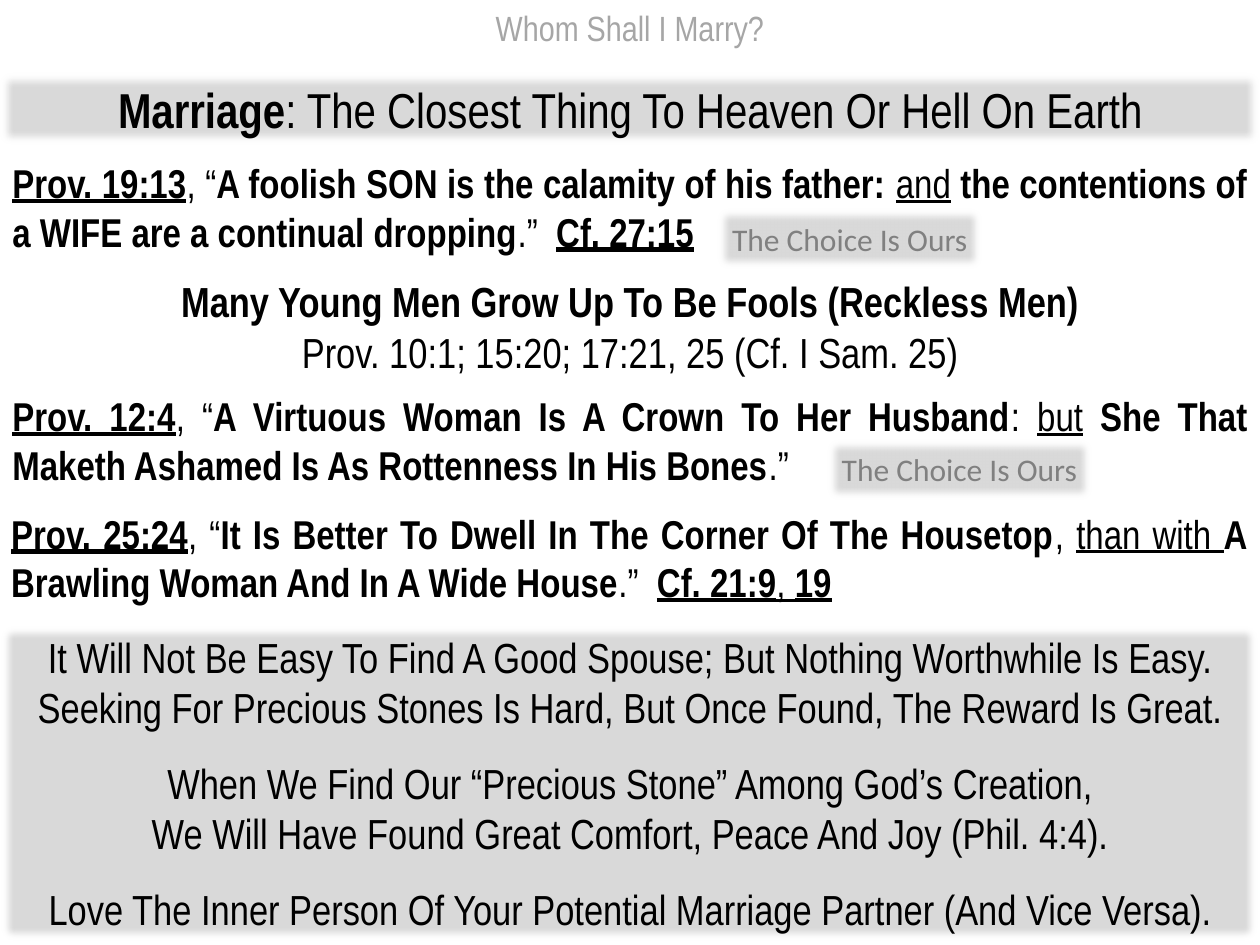
from lxml import etree
from pptx import Presentation
from pptx.dml.color import RGBColor
from pptx.enum.shapes import MSO_SHAPE
from pptx.enum.text import MSO_ANCHOR, MSO_AUTO_SIZE, PP_ALIGN
from pptx.oxml.ns import qn
from pptx.util import Inches, Pt

RECTANGLE = MSO_SHAPE.RECTANGLE
CENTER, JUSTIFY = PP_ALIGN.CENTER, PP_ALIGN.JUSTIFY
TOP, MIDDLE = MSO_ANCHOR.TOP, MSO_ANCHOR.MIDDLE
GROW, FIXED = MSO_AUTO_SIZE.SHAPE_TO_FIT_TEXT, MSO_AUTO_SIZE.NONE

COLORS = {"black": "000000", "title": "A6A6A6", "choice": "808080",
          "panel": "D9D9D9", "outline": "1E3256"}
SOFT_EDGE = Pt(5)


def add_text(paragraph, text, *, style="", size=24, font="Arial Narrow", color="black"):
    """Add text; style may hold b (bold) and u (underline), \n breaks the line."""
    for index, line in enumerate(text.split("\n")):
        if index:
            paragraph.add_line_break()
        if not line:
            continue
        run = paragraph.add_run()
        run.text = line
        run.font.name = font
        run.font.size = Pt(size)
        run.font.bold = "b" in style
        run.font.underline = "u" in style
        run.font.color.rgb = RGBColor.from_string(COLORS[color])


class SlideBuilder:
    def __init__(self, slide):
        self.slide = slide

    def fill_frame(self, shape, paragraphs, align=CENTER, anchor=TOP, fit=GROW,
                   gaps=(), **text_format):
        """Each paragraph is a list of (text, style); gaps maps index to space before."""
        frame = shape.text_frame
        frame.word_wrap = True
        frame.auto_size = fit
        frame.vertical_anchor = anchor
        for index, pieces in enumerate(paragraphs):
            paragraph = frame.add_paragraph() if index else frame.paragraphs[0]
            paragraph.alignment = align
            if index in gaps:
                paragraph.space_before = Pt(gaps[index])
            for text, style in pieces:
                add_text(paragraph, text, style=style, **text_format)

    def text_box(self, left, top, height, pieces, **options):
        box = self.slide.shapes.add_textbox(
            Inches(left), Inches(top), Inches(10), Inches(height))
        self.fill_frame(box, [pieces], **options)

    def verse(self, top, pieces, left=0):
        self.text_box(left, top, 0.88, pieces, align=JUSTIFY, size=23)

    def soft_panel(self, left, top, width, height, paragraphs, outline=False, **options):
        shape = self.slide.shapes.add_shape(
            RECTANGLE, Inches(left), Inches(top), Inches(width), Inches(height))
        shape.fill.solid()
        shape.fill.fore_color.rgb = RGBColor.from_string(COLORS["panel"])
        if outline:
            shape.line.color.rgb = RGBColor.from_string(COLORS["outline"])
            shape.line.width = Pt(1)
        else:
            shape.line.fill.background()
        # Soft edges take the place of the theme shadow
        shape.shadow.inherit = False
        effects = shape._element.spPr.find(qn("a:effectLst"))
        etree.SubElement(effects, qn("a:softEdge"), rad=str(int(SOFT_EDGE)))
        self.fill_frame(shape, paragraphs, **options)

    def choice_label(self, left, top):
        self.soft_panel(left, top, 2.13, 0.51, [[("The Choice Is Ours", "")]],
                        outline=True, anchor=MIDDLE, fit=FIXED,
                        size=18, font="Calibri", color="choice")


def main():
    presentation = Presentation()
    presentation.slide_width = Inches(10)
    presentation.slide_height = Inches(7.5)
    builder = SlideBuilder(presentation.slides.add_slide(presentation.slide_layouts[6]))

    # Heading banner and title
    builder.soft_panel(0, 0.58, 10, 0.57, [[
        ("Marriage", "b"),
        (": The Closest Thing To Heaven Or Hell On Earth", "")]], size=28)
    builder.text_box(0, 0, 0.44, [("Whom Shall I Marry?", "")], size=20, color="title")

    # Closing panel
    closing = [
        "It Will Not Be Easy To Find A Good Spouse; But Nothing Worthwhile Is Easy.",
        "Seeking For Precious Stones Is Hard, But Once Found, The Reward Is Great.",
        "When We Find Our “Precious Stone” Among God’s Creation,\n"
        "We Will Have Found Great Comfort, Peace And Joy (Phil. 4:4).",
        "Love The Inner Person Of Your Potential Marriage Partner (And Vice Versa).",
    ]
    builder.soft_panel(0, 4.96, 10, 2.52, [[(text, "")] for text in closing],
                       gaps={2: 14.5, 3: 14.5})

    # Verses, with the labels beside them
    builder.verse(1.21, [
        ("Prov. 19:13", "bu"), (", “", ""),
        ("A foolish SON is the calamity of his father: ", "b"), ("and", "u"),
        (" the contentions of a WIFE are a continual dropping", "b"),
        (".”  ", ""), ("Cf. 27:15", "bu")])
    builder.choice_label(5.68, 1.64)
    builder.verse(3.06, [
        ("Prov. 12:4", "bu"), (", “", ""),
        ("A Virtuous Woman Is A Crown To Her Husband", "b"), (": ", ""),
        ("but", "u"), (" ", ""),
        ("She That Maketh Ashamed Is As Rottenness In His Bones", "b"), (".”", "")])
    builder.text_box(0, 2.14, 0.91, [
        ("Many Young Men Grow Up To Be Fools (Reckless Men)\n", "b"),
        ("Prov. 10:1; 15:20; 17:21, 25 (Cf. I Sam. 25)", "")])
    builder.verse(3.99, [
        ("Prov. 25:24", "bu"), (", “", ""),
        ("It Is Better To Dwell In The Corner Of The Housetop", "b"), (", ", ""),
        ("than with ", "u"), ("A Brawling Woman And In A Wide House", "b"),
        (".”  ", ""), ("Cf. 21:9", "bu"), (", ", "u"), ("19", "bu")], left=-0.01)
    builder.choice_label(6.55, 3.47)

    presentation.save("out.pptx")


if __name__ == "__main__":
    main()
